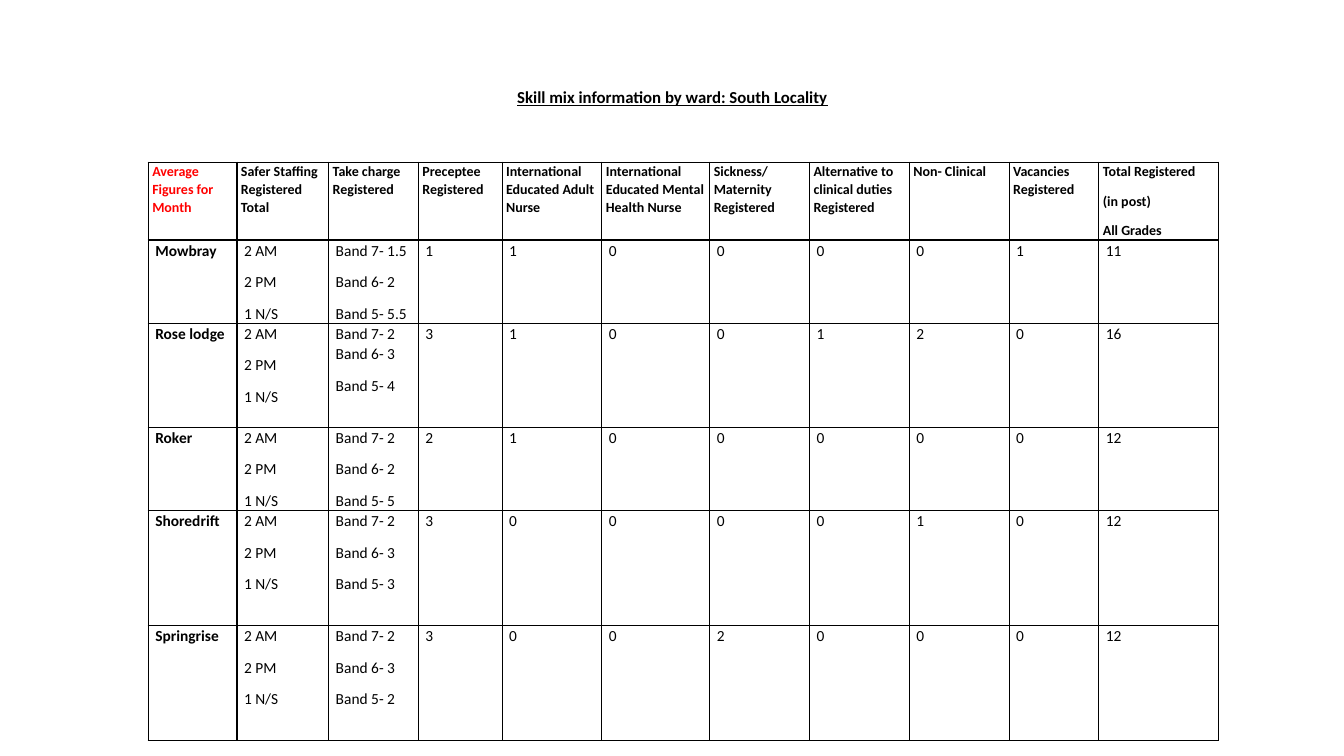
from dataclasses import dataclass

from lxml.etree import SubElement
from pptx import Presentation
from pptx.dml.color import RGBColor
from pptx.enum.text import MSO_ANCHOR as Anchor, PP_ALIGN as Align
from pptx.oxml.ns import qn
from pptx.util import Inches, Pt

HEADINGS = [
    "Average Figures for Month", "Safer Staffing Registered Total",
    "Take charge Registered", "Preceptee Registered",
    "International Educated Adult Nurse",
    "International Educated Mental Health Nurse",
    "Sickness/ Maternity Registered",
    "Alternative to clinical duties Registered", "Non- Clinical",
    "Vacancies Registered", "Total Registered\n(in post)\nAll Grades",
]
SHIFTS = "2 AM\n2 PM\n1 N/S"
WARDS = [
    ("Mowbray", "Band 7- 1.5\nBand 6- 2\nBand 5- 5.5", [1, 1, 0, 0, 0, 0, 1, 11]),
    ("Rose lodge", "Band 7- 2 Band 6- 3\nBand 5- 4", [3, 1, 0, 0, 1, 2, 0, 16]),
    ("Roker", "Band 7- 2\nBand 6- 2\nBand 5- 5", [2, 1, 0, 0, 0, 0, 0, 12]),
    ("Shoredrift", "Band 7- 2\nBand 6- 3\nBand 5- 3", [3, 0, 0, 0, 0, 1, 0, 12]),
    ("Springrise", "Band 7- 2\nBand 6- 3\nBand 5- 2", [3, 0, 0, 2, 0, 0, 0, 12]),
]
COLUMN_WEIGHTS = [88, 91, 89, 83, 99, 107, 99, 99, 99, 89, 119]
ROW_WEIGHTS = [77, 82, 103, 82, 114, 114]


@dataclass(frozen=True)
class Theme:
    font: str = "Calibri"
    ink: str = "000000"
    accent: str = "FF0000"
    title_size: int = 12
    heading_size: int = 10
    body_size: int = 11
    border: int = 1
    heading_inset: float = 0.04
    body_inset: float = 0.07


class SlideBuilder:
    def __init__(self, deck, theme):
        self.deck = deck
        self.theme = theme
        self.slide = deck.slides.add_slide(deck.slide_layouts[5])

    def area(self, left, top, width, height):
        """Turn percentages of the slide's size into lengths."""
        across, down = self.deck.slide_width, self.deck.slide_height
        return [int(share * side / 100) for share, side in
                zip((left, top, width, height), (across, down, across, down))]

    def style(self, para, size, color, bold, underline=False):
        for span in para.runs:
            font = span.font
            font.name, font.size = self.theme.font, Pt(size)
            font.bold, font.underline = bold, underline
            font.color.rgb = RGBColor.from_string(color)

    def title(self, text, *shares):
        box = self.slide.shapes.title
        box.left, box.top, box.width, box.height = self.area(*shares)
        frame = box.text_frame
        frame.text = text
        frame.word_wrap = True
        frame.vertical_anchor = Anchor.MIDDLE
        frame.margin_top = Inches(0.23)
        para = frame.paragraphs[0]
        para.alignment, para.line_spacing = Align.CENTER, 0.9
        self.style(para, self.theme.title_size, self.theme.ink, True, True)

    def table(self, rows, column_weights, row_weights, *shares):
        left, top, width, height = self.area(*shares)
        table = self.slide.shapes.add_table(
            len(rows), len(column_weights), left, top, width, height).table
        table.first_row = table.horz_banding = False
        for column, weight in zip(table.columns, column_weights):
            column.width = width * weight // sum(column_weights)
        for row, weight in zip(table.rows, row_weights):
            row.height = height * weight // sum(row_weights)
        for row_index, values in enumerate(rows):
            for column_index, value in enumerate(values):
                self.cell(table.cell(row_index, column_index), str(value),
                          row_index, column_index)

    def cell(self, cell, text, row, column):
        theme = self.theme
        heading = row == 0
        self.borders(cell)
        cell.fill.background()
        cell.margin_left = cell.margin_right = Inches(
            theme.heading_inset if heading else theme.body_inset)
        cell.margin_top = cell.margin_bottom = 0
        cell.text_frame.text = text
        for para in cell.text_frame.paragraphs:
            para.line_spacing, para.space_after = 1.07, Pt(8)
            para.alignment = Align.JUSTIFY if row and column > 2 else Align.LEFT
            self.style(para, theme.heading_size if heading else theme.body_size,
                       theme.accent if row == column == 0 else theme.ink,
                       heading or column == 0)

    def borders(self, cell):
        properties = cell._tc.get_or_add_tcPr()
        for side in ("lnL", "lnR", "lnT", "lnB"):
            line = SubElement(properties, qn(f"a:{side}"), w=str(Pt(self.theme.border)))
            fill = SubElement(line, qn("a:solidFill"))
            SubElement(fill, qn("a:srgbClr"), val=self.theme.ink)


def main():
    deck = Presentation()
    deck.slide_width, deck.slide_height = Inches(13.33), Inches(7.5)
    page = SlideBuilder(deck, Theme())
    page.title("Skill mix information by ward: South Locality",
               6.9, 5.33, 86.27, 12.93)
    rows = [HEADINGS] + [[ward, SHIFTS, bands, *counts]
                         for ward, bands, counts in WARDS]
    page.table(rows, COLUMN_WEIGHTS, ROW_WEIGHTS, 11.03, 21.47, 79.67, 76.3)
    deck.save("out.pptx")


if __name__ == "__main__":
    main()
